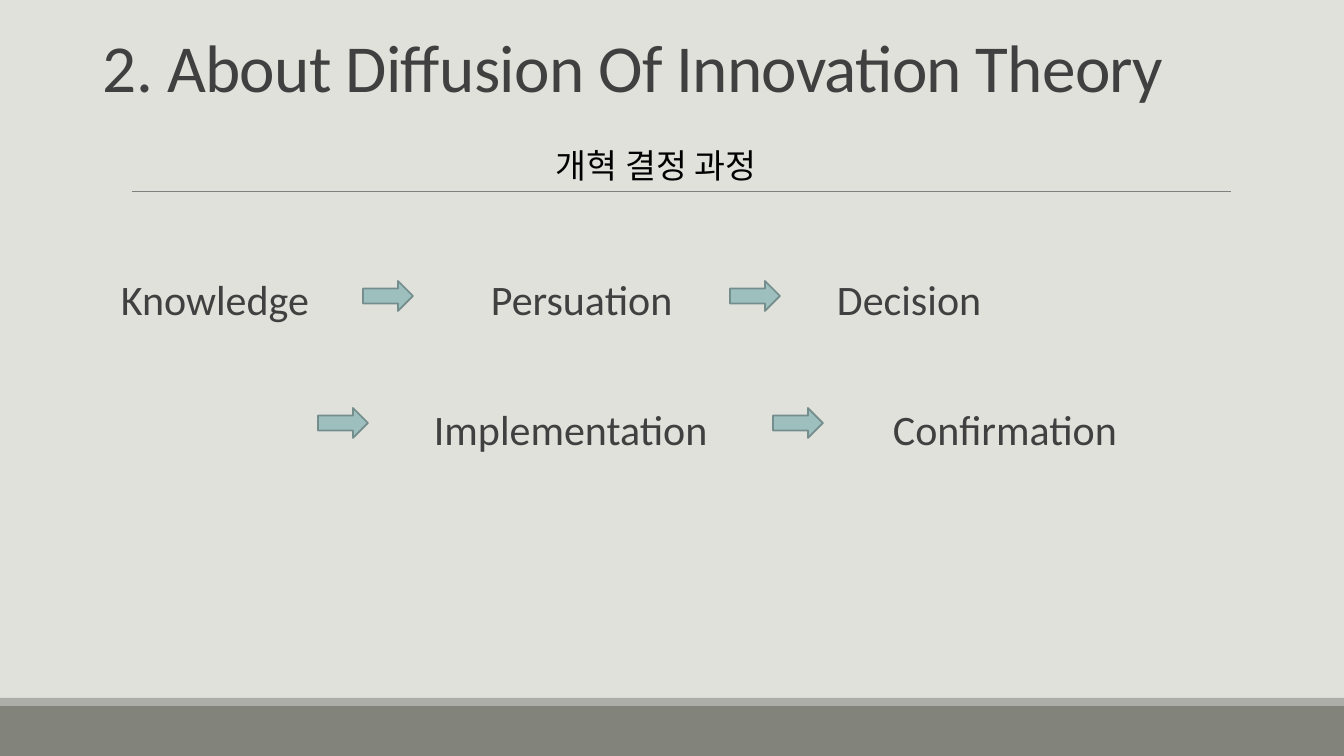
import pptx
import pptx.util
import pptx.dml.color
import pptx.enum.shapes
import pptx.enum.text
import pptx.oxml

RGBColor = pptx.dml.color.RGBColor
SHAPES = pptx.enum.shapes.MSO_SHAPE
ANCHOR = pptx.enum.text.MSO_ANCHOR

PAPER = RGBColor(0xE1, 0xE1, 0xDB)
BAND = RGBColor(0x82, 0x84, 0x7C)
BAND_EDGE = RGBColor(0xAC, 0xAD, 0xA8)
RULE = RGBColor(0x80, 0x80, 0x80)
INK = RGBColor(0x40, 0x40, 0x40)
BLACK = RGBColor(0, 0, 0)
ARROW = RGBColor(0x9D, 0xBF, 0xBE)
ARROW_EDGE = RGBColor(0x74, 0x8D, 0x8D)

WIDTH, HEIGHT = 1344, 756
EMU_PER_PX = 12192000 / WIDTH


def px(length):
    return pptx.util.Emu(round(length * EMU_PER_PX))


def add_text(page, text, left, top, width, height, *, size, color=INK, font="Calibri",
             anchor=ANCHOR.TOP, inset=(0, 0), line_spacing=1.0, tracking=0, wrap=True):
    box = page.shapes.add_textbox(px(left), px(top), px(width), px(height))
    frame = box.text_frame
    frame.word_wrap = wrap
    frame.vertical_anchor = anchor
    frame.margin_left = frame.margin_right = px(inset[0])
    frame.margin_top = frame.margin_bottom = px(inset[1])
    para = frame.paragraphs[0]
    para.line_spacing = line_spacing
    span = para.add_run()
    span.text = text
    span.font.size = pptx.util.Pt(size)
    span.font.name = font
    span.font.color.rgb = color
    if tracking:
        span._r.get_or_add_rPr().set("spc", str(round(tracking * 100)))


def add_block(page, kind, left, top, width, height, fill, edge=None):
    block = page.shapes.add_shape(kind, px(left), px(top), px(width), px(height))
    block.shadow.inherit = False
    block.fill.solid()
    block.fill.fore_color.rgb = fill
    if edge is None:
        block.line.fill.background()
    else:
        block.line.color.rgb = edge
        block.line.width = pptx.util.Pt(1.25)


def add_footer(page, left, top, width, height):
    edge_height = 8
    add_block(page, SHAPES.RECTANGLE, left, top + edge_height, width,
              height - edge_height, BAND)
    add_block(page, SHAPES.RECTANGLE, left, top, width, edge_height, BAND_EDGE)


def add_header(page, left, top, width, height):
    rule = page.shapes.add_connector(
        pptx.enum.shapes.MSO_CONNECTOR.STRAIGHT,
        px(left + 39), px(top + height), px(left + 1138), px(top + height))
    rule.line.color.rgb = RULE
    rule.line.width = pptx.util.Pt(0.5)
    rule._element.spPr.append(pptx.oxml.parse_xml(
        '<a:effectLst xmlns:a="http://schemas.openxmlformats.org/drawingml/2006/main"/>'))
    add_text(page, "2. About Diffusion Of Innovation Theory", left, top, width, 111,
             size=48, anchor=ANCHOR.BOTTOM, inset=(10, 5), line_spacing=0.85,
             tracking=-0.5)
    add_text(page, "개혁 결정 과정", left + 453, top + 140, 248, 50, size=24,
             color=BLACK, font="Arial", inset=(10, 5), wrap=False)


def add_step_row(page, left, top, width, height, steps, arrows, arrow_top):
    for label, offset in steps:
        add_text(page, label, left + offset, top, width, height, size=30)
    for offset in arrows:
        add_block(page, SHAPES.RIGHT_ARROW, left + offset, top + arrow_top, 50, 30,
                  ARROW, ARROW_EDGE)


def add_process(page, left, top, width, height):
    row_pitch = 130
    add_step_row(page, left, top, width, height,
                 [("Knowledge", 0), ("Persuation", 370), ("Decision", 716)],
                 [242, 609], 7)
    add_step_row(page, left, top + row_pitch, width, height,
                 [("Implementation", 313), ("Confirmation", 772)],
                 [197, 652], 4)


def main():
    deck = pptx.Presentation()
    deck.slide_width, deck.slide_height = px(WIDTH), px(HEIGHT)
    page = deck.slides.add_slide(deck.slide_layouts[6])
    page.background.fill.solid()
    page.background.fill.fore_color.rgb = PAPER
    add_footer(page, 0, 698, WIDTH, 58)
    add_header(page, 93, 0, 1159, 191)
    add_process(page, 121, 274, 290, 51)
    deck.save("out.pptx")


if __name__ == "__main__":
    main()
